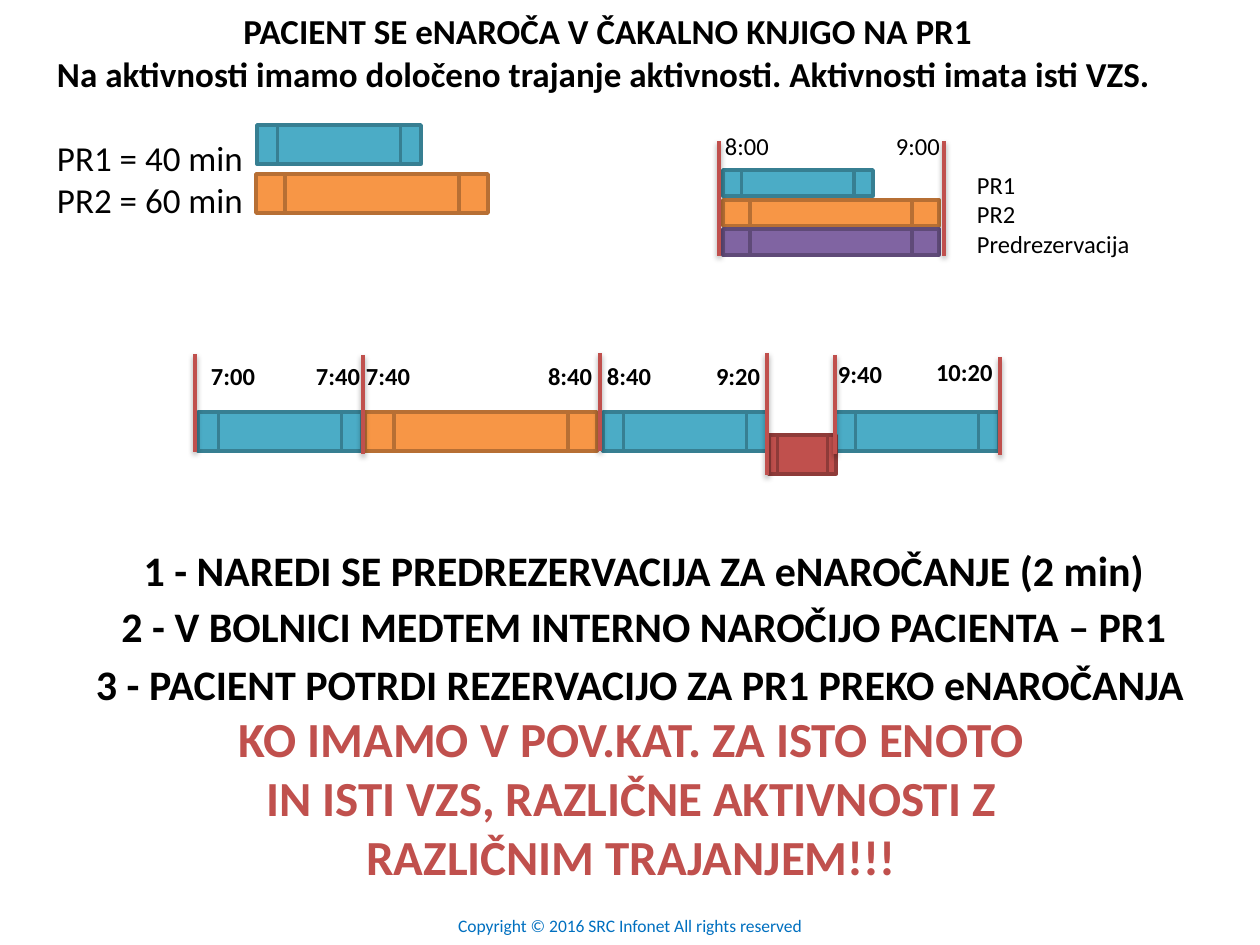
from pptx import Presentation
from pptx.dml.color import RGBColor
from pptx.enum.shapes import MSO_CONNECTOR, MSO_SHAPE
from pptx.enum.text import MSO_ANCHOR, MSO_AUTO_SIZE, PP_ALIGN
from pptx.util import Pt

PX = 914400 / 126
FONT = "Calibri"
LEFT, CENTER = PP_ALIGN.LEFT, PP_ALIGN.CENTER
PROCESS = MSO_SHAPE.FLOWCHART_PREDEFINED_PROCESS
STRAIGHT = MSO_CONNECTOR.STRAIGHT

BLACK = RGBColor(0x00, 0x00, 0x00)
RED = RGBColor(0xC0, 0x50, 0x4D)
RED_EDGE = RGBColor(0x8E, 0x3B, 0x39)
TEAL = RGBColor(0x4B, 0xAC, 0xC6)
TEAL_EDGE = RGBColor(0x37, 0x7F, 0x92)
ORANGE = RGBColor(0xF7, 0x96, 0x46)
ORANGE_EDGE = RGBColor(0xB7, 0x6F, 0x34)
PURPLE = RGBColor(0x80, 0x64, 0xA2)
PURPLE_EDGE = RGBColor(0x5F, 0x4A, 0x78)
FOOTER_BLUE = RGBColor(0x00, 0x70, 0xC0)

PR1 = (TEAL, TEAL_EDGE)
PR2 = (ORANGE, ORANGE_EDGE)
PREBOOKING = (PURPLE, PURPLE_EDGE)
GAP = (RED, RED_EDGE)


def px(*lengths):
    return [round(length * PX) for length in lengths]


def write(box, lines, size, color=BLACK, bold=False, align=LEFT, wrap=False):
    """Fill a text shape with one paragraph per line, without insets."""
    frame = box.text_frame
    frame.auto_size = MSO_AUTO_SIZE.NONE
    frame.word_wrap = wrap
    frame.vertical_anchor = MSO_ANCHOR.MIDDLE
    frame.margin_left = frame.margin_right = 0
    frame.margin_top = frame.margin_bottom = 0
    for index, line in enumerate(lines):
        paragraph = frame.add_paragraph() if index else frame.paragraphs[0]
        paragraph.alignment = align
        run = paragraph.add_run()
        run.text = line
        run.font.name = FONT
        run.font.size = Pt(size)
        run.font.bold = bold
        run.font.color.rgb = color


prs = Presentation()
prs.slide_width, prs.slide_height = px(1260, 945)
slide = prs.slides.add_slide(prs.slide_layouts[5])
shapes = slide.shapes

# Heading
heading = shapes.title
heading.left, heading.top, heading.width, heading.height = px(57, 0, 1102, 104)
write(heading, [
    "PACIENT SE eNAROČA V ČAKALNO KNJIGO NA PR1",
    "Na aktivnosti imamo določeno trajanje aktivnosti. Aktivnosti imata isti VZS.",
], 20, bold=True, align=CENTER)
heading.text_frame.paragraphs[1].alignment = LEFT

# Activity bars: durations, overlapping slot, day schedule
bars = [
    (257, 125, 164, 39, PR1),
    (256, 174, 232, 39, PR2),
    (723, 170, 150, 26, PR1),
    (723, 200, 216, 26, PR2),
    (723, 229, 216, 26, PREBOOKING),
    (198, 412, 164, 39, PR1),
    (365, 412, 232, 39, PR2),
    (603, 412, 164, 39, PR1),
    (835, 412, 164, 39, PR1),
    (769, 435, 67, 39, GAP),
]
for left, top, width, height, (fill, edge) in bars:
    bar = shapes.add_shape(PROCESS, *px(left, top, width, height))
    bar.shadow.inherit = False
    bar.fill.solid()
    bar.fill.fore_color.rgb = fill
    bar.line.color.rgb = edge
    bar.line.width = Pt(2)

# Time boundaries keep the soft theme shadow
boundaries = [
    (719, 141, 256), (944, 141, 256),
    (195, 354, 452), (363, 355, 454), (600, 353, 451),
    (767, 353, 475), (835, 355, 454), (1000, 357, 455),
]
for x, top, bottom in boundaries:
    boundary = shapes.add_connector(STRAIGHT, *px(x, top, x, bottom))
    boundary.line.color.rgb = RED
    boundary.line.width = Pt(2)

# Times
slot_times = [("8:00", 725, 146), ("9:00", 896, 146)]
schedule_times = [
    ("7:00", 211, 376), ("7:40", 316, 376), ("7:40", 366, 376),
    ("8:40", 548, 376), ("8:40", 607, 376), ("9:20", 716, 376),
    ("9:40", 838, 374), ("10:20", 936, 372),
]
for times, bold in ((slot_times, False), (schedule_times, True)):
    for time, left, middle in times:
        label = shapes.add_textbox(*px(left, middle - 15, 11 * len(time), 30))
        write(label, [time], 14, bold=bold)

# Names of the activities
durations = shapes.add_textbox(*px(57, 130, 190, 96))
write(durations, ["PR1 = 40 min", "PR2 = 60 min"], 20)
slot_names = shapes.add_textbox(*px(977, 163, 182, 102))
write(slot_names, ["PR1", "PR2", "Predrezervacija"], 14)

# Booking steps
steps = [
    ("1 - NAREDI SE PREDREZERVACIJA ZA eNAROČANJE (2 min)", 644, 570),
    ("2 - V BOLNICI MEDTEM INTERNO NAROČIJO PACIENTA – PR1", 644, 626),
    ("3 - PACIENT POTRDI REZERVACIJO ZA PR1 PREKO eNAROČANJA", 640, 684),
]
for step, center, middle in steps:
    step_box = shapes.add_textbox(*px(center - 580, middle - 30, 1160, 60))
    write(step_box, [step], 24, bold=True, align=CENTER, wrap=True)

warning = shapes.add_textbox(*px(217, 702, 828, 190))
write(warning, [
    "KO IMAMO V POV.KAT. ZA ISTO ENOTO IN ISTI VZS, "
    "RAZLIČNE AKTIVNOSTI Z RAZLIČNIM TRAJANJEM!!!",
], 28, RED, bold=True, align=CENTER, wrap=True)

footer = shapes.add_textbox(*px(430, 910, 400, 30))
write(footer, ["Copyright © 2016 SRC Infonet All rights reserved"], 10,
      FOOTER_BLUE, align=CENTER, wrap=True)

prs.save("out.pptx")
